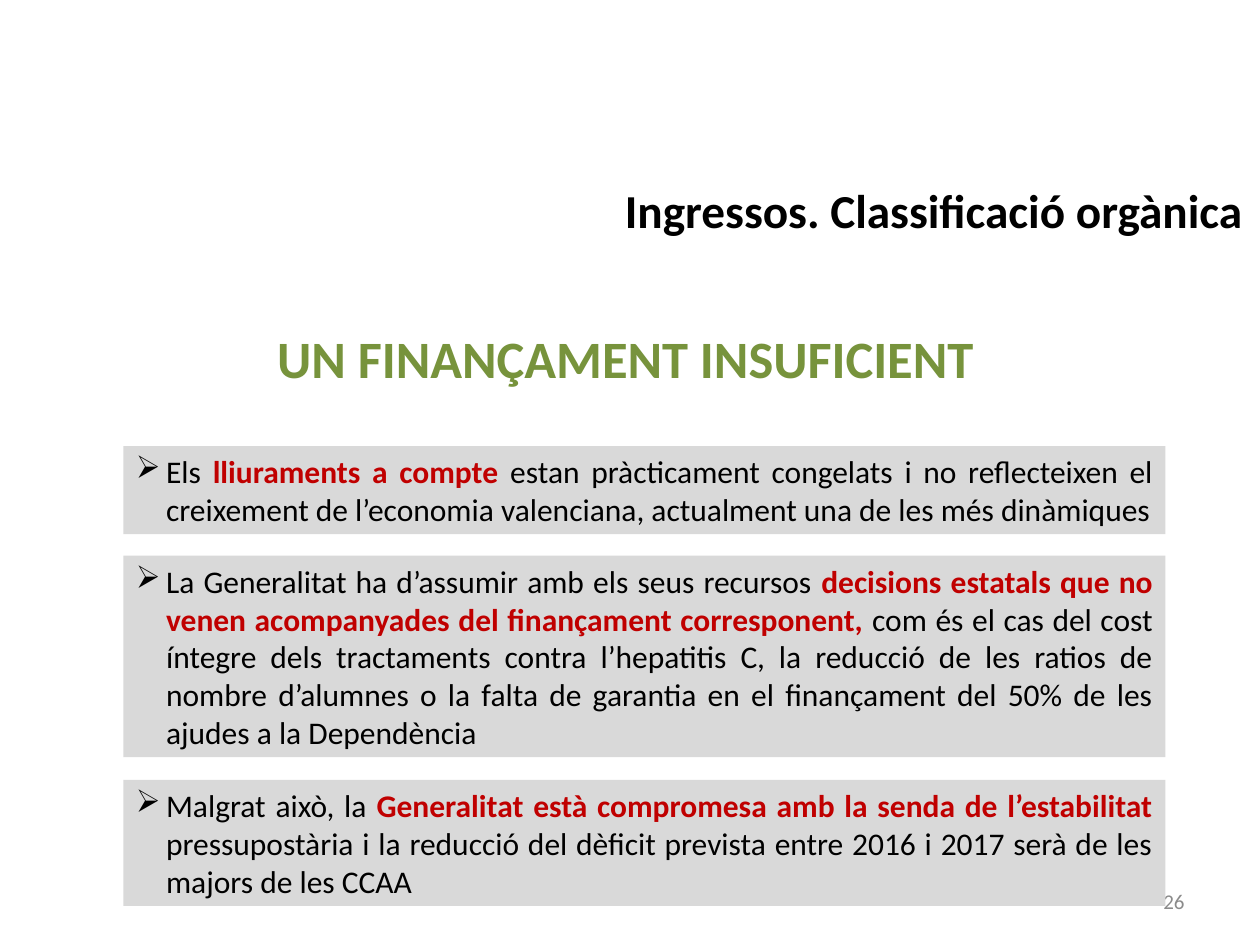
from lxml import etree
from pptx import Presentation
from pptx import util as u
from pptx.dml.color import RGBColor
from pptx.enum import shapes, text
from pptx.oxml import ns

BLACK, RED, GREEN, GREY, PALE = "000000", "C00000", "77933C", "8B8B8B", "D9D9D9"
ALIGN = text.PP_ALIGN

POINTS = [
    (3.54, 0.7, [
        "Els ",
        "lliuraments a compte ",
        "estan pràcticament congelats i no reflecteixen el creixement de "
        "l’economia valenciana, actualment una de les més dinàmiques"]),
    (4.41, 1.6, [
        "La Generalitat ha d’assumir amb els seus recursos ",
        "decisions estatals que no venen acompanyades del finançament corresponent,",
        " com és el cas del cost íntegre dels tractaments contra l’hepatitis C, "
        "la reducció de les ratios de nombre d’alumnes o la falta de garantia "
        "en el finançament del 50% de les ajudes a la Dependència"]),
    (6.19, 1, [
        "Malgrat això, la ",
        "Generalitat està compromesa amb la senda de l’estabilitat ",
        "pressupostària i la reducció del dèficit prevista entre 2016 i 2017 "
        "serà de les majors de les CCAA"]),
]


def color(code):
    """Turn a hex string into a colour."""
    return RGBColor.from_string(code)


def inches(box):
    """Turn left, top, width and height into lengths."""
    return [u.Inches(side) for side in box]


def write(frame, words, size=18, hue=BLACK, bold=False):
    """Add a run of formatted text to the frame's first paragraph."""
    run = frame.paragraphs[0].add_run()
    run.text = words
    font = run.font
    font.name, font.size, font.bold = "Calibri", u.Pt(size), bold
    font.color.rgb = color(hue)


def fit(frame, align, anchor=text.MSO_ANCHOR.TOP):
    """Set wrapping, anchor and alignment of a frame."""
    frame.word_wrap = True
    frame.vertical_anchor = anchor
    frame.paragraphs[0].alignment = align


def label(slide, box, words, align, anchor=text.MSO_ANCHOR.TOP, **style):
    """Place one line of text in a box."""
    frame = slide.shapes.add_textbox(*inches(box)).text_frame
    fit(frame, align, anchor)
    write(frame, words, **style)


def bullet(para, mark, indent):
    """Give a paragraph a hanging bullet."""
    props = para._p.get_or_add_pPr()
    props.set("marL", str(u.Inches(indent)))
    props.set("indent", str(-u.Inches(indent)))
    etree.SubElement(props, ns.qn("a:buChar")).set("char", mark)


def panel(slide, box, parts):
    """Place a grey panel whose middle part is stressed."""
    shape = slide.shapes.add_shape(shapes.MSO_SHAPE.RECTANGLE, *inches(box))
    shape.shadow.inherit = False
    shape.fill.solid()
    shape.fill.fore_color.rgb = color(PALE)
    shape.line.fill.background()
    frame = shape.text_frame
    fit(frame, ALIGN.JUSTIFY)
    bullet(frame.paragraphs[0], "➢", 0.24)
    lead, stress, rest = parts
    write(frame, lead)
    write(frame, stress, hue=RED, bold=True)
    write(frame, rest)


def main():
    """Build the slide and save it."""
    deck = Presentation()
    deck.slide_width, deck.slide_height = u.Inches(10), u.Inches(7.5)
    slide = deck.slides.add_slide(deck.slide_layouts[6])
    label(slide, (7.17, 6.95, 2.33, 0.4), "26", ALIGN.RIGHT,
          text.MSO_ANCHOR.MIDDLE, size=12, hue=GREY)
    label(slide, (4.13, 1.39, 5.83, 0.55), "Ingressos. Classificació orgànica",
          ALIGN.RIGHT, size=27, bold=True)
    label(slide, (1.54, 2.54, 6.85, 0.6), "UN FINANÇAMENT INSUFICIENT",
          ALIGN.CENTER, size=30, hue=GREEN, bold=True)
    for top, height, parts in POINTS:
        panel(slide, (0.98, top, 8.27, height), parts)
    deck.save("out.pptx")


if __name__ == "__main__":
    main()
